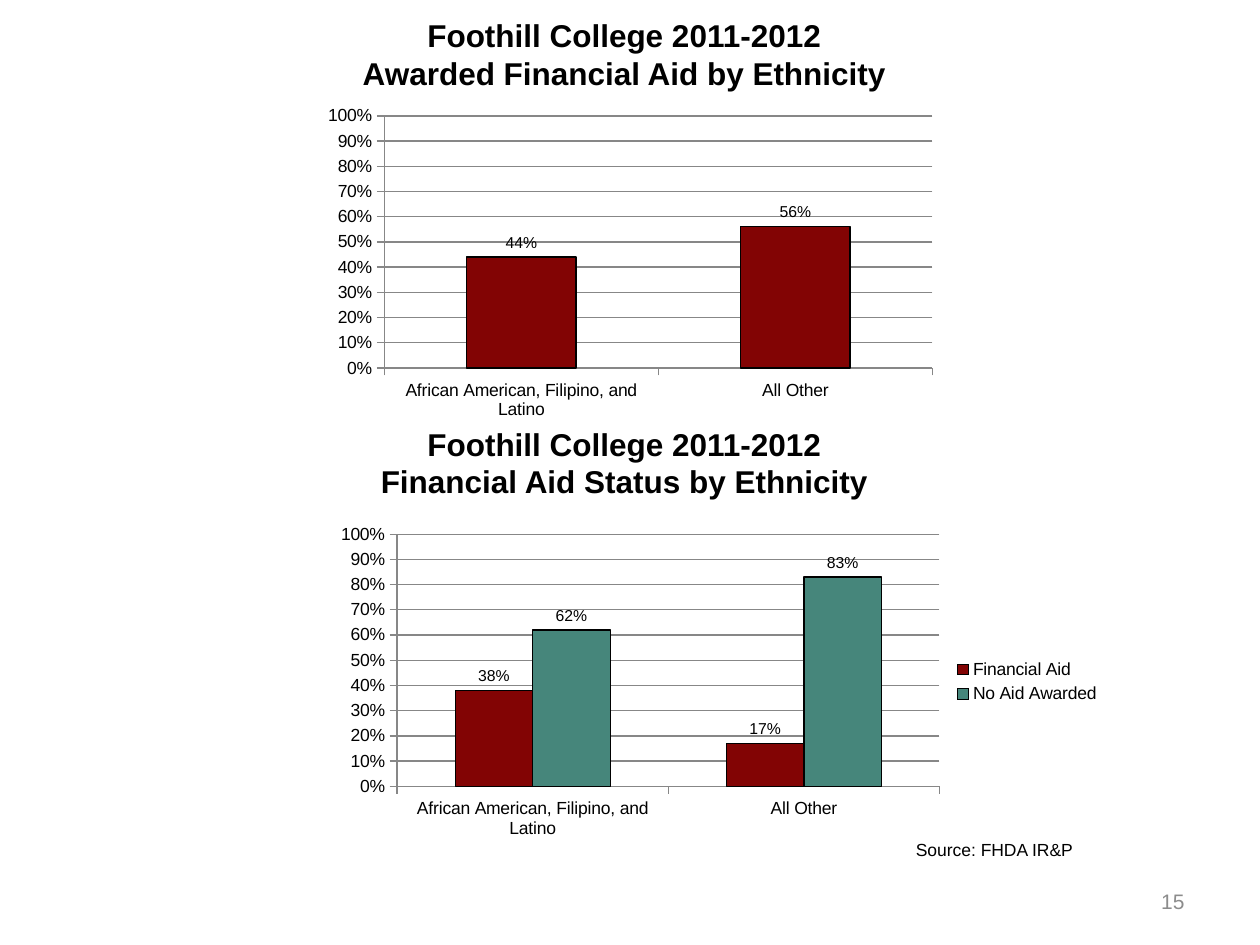
from lxml import etree
from pptx import Presentation
from pptx.chart.data import CategoryChartData
from pptx.dml.color import RGBColor
from pptx.enum.chart import XL_CHART_TYPE as CT, XL_LABEL_POSITION as LP
from pptx.enum.chart import XL_LEGEND_POSITION as LEGEND, XL_TICK_MARK as TICK
from pptx.enum.text import MSO_ANCHOR as ANCHOR, MSO_AUTO_SIZE as AUTO, PP_ALIGN as ALIGN
from pptx.oxml.ns import qn
from pptx.util import Inches, Pt

BLACK, GRAY, AXIS = "000000", "8C8C8C", "878787"
RED, TEAL = "820404", "46867B"
GROUPS = ["African American, Filipino, and Latino", "All Other"]


def rgb(color):
    return RGBColor.from_string(color)


def write(sp, text, size=10, color=BLACK, bold=False, align=ALIGN.LEFT,
          anchor=ANCHOR.TOP, font="Arial"):
    """Fill a shape with text, one paragraph per line."""
    tf = sp.text_frame
    tf.word_wrap = True
    tf.auto_size = AUTO.NONE
    tf.vertical_anchor = anchor
    tf.text = text
    for p in tf.paragraphs:
        p.alignment = align
        for r in p.runs:
            r.font.name, r.font.size, r.font.bold = font, Pt(size), bold
            r.font.color.rgb = rgb(color)


class SlideBuilder:
    font = "Arial"
    heading_style = dict(size=18, bold=True, align=ALIGN.CENTER)

    def __init__(self, prs):
        self.s = prs.slides.add_slide(prs.slide_layouts[5])

    def title(self, text, x, y, w, h):
        sp = self.s.shapes.title
        sp.left, sp.top, sp.width, sp.height = map(Inches, (x, y, w, h))
        write(sp, text, font=self.font, **self.heading_style)

    def text(self, text, x, y, w, h, **style):
        sp = self.s.shapes.add_textbox(*map(Inches, (x, y, w, h)))
        write(sp, text, font=self.font, **style)

    def heading(self, text, x, y, w, h):
        self.text(text, x, y, w, h, **self.heading_style)

    def columns(self, series, x, y, w, h, plot, legend=False):
        """Column chart; series holds (name, values, color), plot the inner area."""
        data = CategoryChartData(number_format="0%")
        data.categories = GROUPS
        for name, values, _ in series:
            data.add_series(name, values)
        chart = self.s.shapes.add_chart(
            CT.COLUMN_CLUSTERED, *map(Inches, (x, y, w, h)), data).chart
        chart.has_title = False
        chart.font.name, chart.font.size = self.font, Pt(10)
        chart.font.color.rgb = rgb(BLACK)
        chart.has_legend = legend
        if legend:
            chart.legend.position = LEGEND.RIGHT
            chart.legend.include_in_layout = False

        # Axes and gridlines
        value = chart.value_axis
        value.minimum_scale, value.maximum_scale, value.major_unit = 0, 1, 0.1
        value.has_major_gridlines = True
        value.tick_labels.number_format = "0%"
        value.tick_labels.number_format_is_linked = False
        for axis in (value, chart.category_axis):
            axis.major_tick_mark = TICK.OUTSIDE
        for part in (value, chart.category_axis, value.major_gridlines):
            part.format.line.color.rgb = rgb(AXIS)
            part.format.line.width = Pt(0.75)

        # Columns and their labels
        bars = chart.plots[0]
        bars.gap_width, bars.overlap, bars.vary_by_categories = 150, 0, False
        for ser, (_, _, color) in zip(bars.series, series):
            ser.format.fill.solid()
            ser.format.fill.fore_color.rgb = rgb(color)
            ser.format.line.color.rgb = rgb(BLACK)
            ser.format.line.width = Pt(0.75)
            labels = ser.data_labels
            labels.show_value = True
            labels.position = LP.OUTSIDE_END
            labels.number_format, labels.number_format_is_linked = "0%", False
            labels.font.name, labels.font.size = self.font, Pt(9)
            labels.font.color.rgb = rgb(BLACK)
        self.place_plot(chart, plot)

    def place_plot(self, chart, plot):
        """Fix the inner plot area, given as fractions of the chart."""
        area = chart._chartSpace.find(".//" + qn("c:plotArea"))
        for old in area.findall(qn("c:layout")):
            area.remove(old)
        layout = etree.Element(qn("c:layout"))
        area.insert(0, layout)
        manual = etree.SubElement(layout, qn("c:manualLayout"))
        settings = [("layoutTarget", "inner"), ("xMode", "edge"), ("yMode", "edge")]
        for tag, val in settings + list(zip("xywh", plot)):
            etree.SubElement(manual, qn("c:" + tag)).set("val", str(val))


def main():
    prs = Presentation()
    prs.slide_width, prs.slide_height = Inches(10), Inches(7.5)
    page = SlideBuilder(prs)

    # Awarded aid
    page.title("Foothill College 2011-2012\nAwarded Financial Aid by Ethnicity",
               1.08, 0.08, 7.75, 0.71)
    page.columns([("Series 1", (0.44, 0.56), RED)],
                 2.5, 0.79, 5, 2.6, plot=(0.11, 0.05, 0.87, 0.77))

    # Aid status
    page.heading("Foothill College 2011-2012\nFinancial Aid Status by Ethnicity",
                 1.08, 3.32, 7.75, 0.71)
    page.columns([("Financial Aid", (0.38, 0.17), RED),
                  ("No Aid Awarded", (0.62, 0.83), TEAL)],
                 2.59, 4.11, 6.24, 2.6, plot=(0.09, 0.05, 0.69, 0.77), legend=True)

    # Source and page number
    page.text("Source: FHDA IR&P", 7.17, 6.61, 2.42, 0.27)
    page.text("15", 7.17, 6.95, 2.33, 0.4, size=12, color=GRAY,
              align=ALIGN.RIGHT, anchor=ANCHOR.MIDDLE)
    prs.save("out.pptx")


if __name__ == "__main__":
    main()
